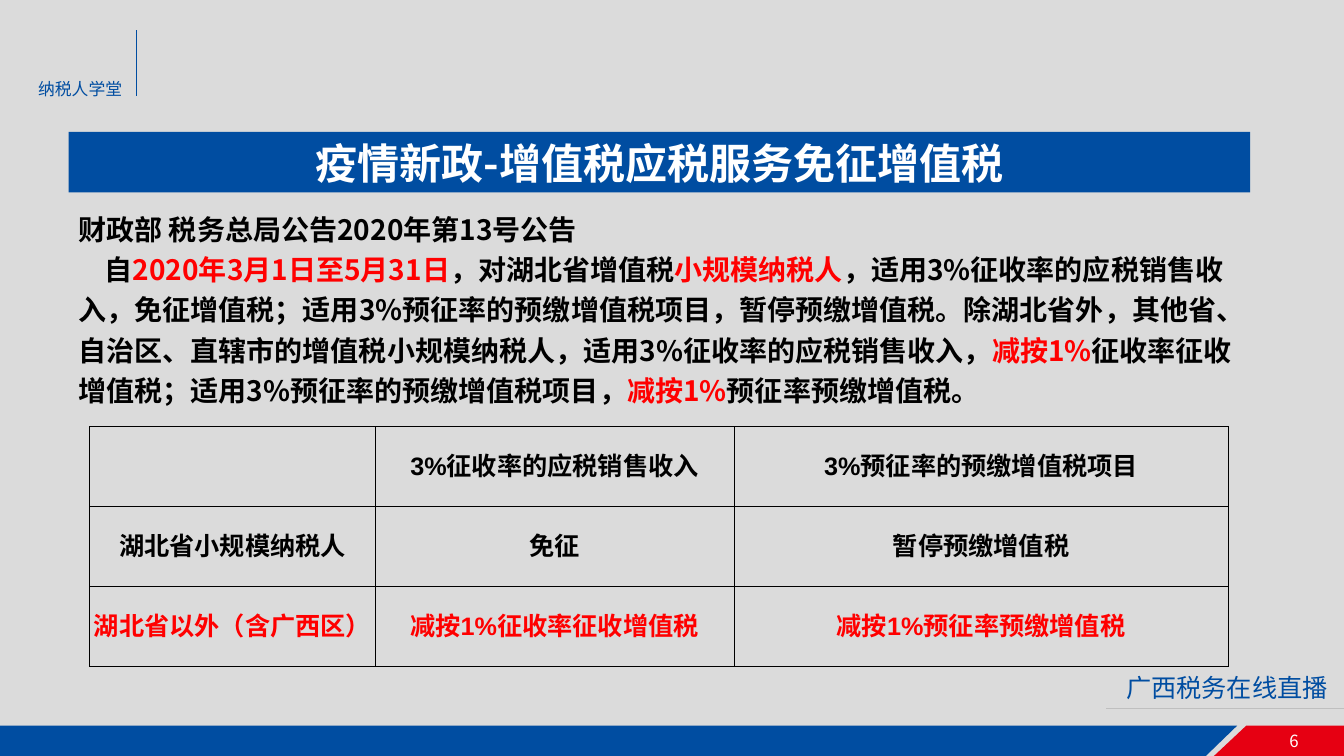
from lxml.etree import SubElement
from pptx import Presentation
from pptx.dml.color import RGBColor
from pptx.enum.shapes import MSO_CONNECTOR, MSO_SHAPE
from pptx.enum.text import MSO_ANCHOR, PP_ALIGN
from pptx.oxml.ns import qn
from pptx.util import Inches, Pt

BLUE = RGBColor(0x00, 0x4D, 0xA1)
RED = RGBColor(0xE6, 0x00, 0x12)
ACCENT = RGBColor(0xFF, 0x00, 0x00)
BLACK = RGBColor(0x00, 0x00, 0x00)
WHITE = RGBColor(0xFF, 0xFF, 0xFF)
GREY = RGBColor(0xBF, 0xBF, 0xBF)
BACKGROUND = RGBColor(0xDB, 0xDB, 0xDB)
CJK = "Noto Sans CJK SC"


def style(span, size, color, bold=False, latin=CJK):
    """Format a run, with the CJK font for its Chinese characters."""
    span.font.size = Pt(size)
    span.font.bold = bold
    span.font.color.rgb = color
    span.font.name = latin
    SubElement(span.font._element, qn("a:ea")).set("typeface", CJK)


deck = Presentation()
deck.slide_width, deck.slide_height = Inches(13.33), Inches(7.5)
page = deck.slides.add_slide(deck.slide_layouts[6])
page.background.fill.solid()
page.background.fill.fore_color.rgb = BACKGROUND
shapes = page.shapes

# Footer bands with slanted ends
footer_bands = [
    (BLUE, [(0, 7.2), (12.27, 7.2), (11.96, 7.5), (0, 7.5)]),
    (RED, [(12.36, 7.2), (13.33, 7.2), (13.33, 7.5), (12.04, 7.5)]),
]
for color, corners in footer_bands:
    points = [(Inches(x), Inches(y)) for x, y in corners]
    builder = shapes.build_freeform(*points[0])
    builder.add_line_segments(points[1:], close=True)
    band = builder.convert_to_shape()
    band.shadow.inherit = False
    band.fill.solid()
    band.fill.fore_color.rgb = color
    band.line.fill.background()

# Thin rules beside the labels
rules = [(1.35, 0.3, 1.35, 0.95, BLUE), (10.97, 7.03, 13.33, 7.03, GREY)]
for x1, y1, x2, y2, color in rules:
    rule = shapes.add_connector(
        MSO_CONNECTOR.STRAIGHT, Inches(x1), Inches(y1), Inches(x2), Inches(y2))
    rule.line.color.rgb = color
    rule.line.width = Pt(0.5)
    SubElement(rule._element.spPr, qn("a:effectLst"))

# Labels and page number
labels = [
    ("6", 12.69, 7.2, 0.54, 0.3, 12, WHITE),
    ("纳税人学堂", 0.28, 0.73, 1.08, 0.3, 12, BLUE),
    ("广西税务在线直播", 11.07, 6.62, 2.26, 0.4, 18, BLUE),
]
for text, left, top, width, height, size, color in labels:
    box = shapes.add_textbox(Inches(left), Inches(top), Inches(width), Inches(height))
    box.text_frame.text = text
    style(box.text_frame.paragraphs[0].runs[0], size, color)

# Title bar
title = shapes.add_shape(
    MSO_SHAPE.RECTANGLE, Inches(0.68), Inches(1.31), Inches(11.72), Inches(0.6))
title.shadow.inherit = False
title.fill.solid()
title.fill.fore_color.rgb = BLUE
title.line.fill.background()
title.text_frame.text = "疫情新政-增值税应税服务免征增值税"
title.text_frame.paragraphs[0].alignment = PP_ALIGN.CENTER
style(title.text_frame.paragraphs[0].runs[0], 30, WHITE, bold=True)

# Announcement text
announcement = [
    [("财政部 税务总局公告2020年第13号公告", BLACK)],
    [
        ("自", BLACK),
        ("2020年3月1日至5月31日", ACCENT),
        ("，对湖北省增值税", BLACK),
        ("小规模纳税人", ACCENT),
        ("，适用3%征收率的应税销售收入，免征增值税；适用3%预征率的预缴增值税项目，"
         "暂停预缴增值税。除湖北省外，其他省、自治区、直辖市的增值税小规模纳税人，"
         "适用3%征收率的应税销售收入，", BLACK),
        ("减按1%", ACCENT),
        ("征收率征收增值税；适用3%预征率的预缴增值税项目，", BLACK),
        ("减按1%", ACCENT),
        ("预征率预缴增值税。", BLACK),
    ],
]
body = shapes.add_textbox(Inches(0.68), Inches(1.99), Inches(11.72), Inches(2.15))
frame = body.text_frame
frame.word_wrap = True
for index, pieces in enumerate(announcement):
    para = frame.add_paragraph() if index else frame.paragraphs[0]
    para.line_spacing = 1.2
    for text, color in pieces:
        span = para.add_run()
        span.text = text
        style(span, 20, color, bold=True)
frame.paragraphs[1]._p.get_or_add_pPr().set("indent", str(Inches(0.26)))

# Comparison table
rows = [
    ["", "3%征收率的应税销售收入", "3%预征率的预缴增值税项目"],
    ["湖北省小规模纳税人", "免征", "暂停预缴增值税"],
    ["湖北省以外（含广西区）", "减按1%征收率征收增值税", "减按1%预征率预缴增值税"],
]
column_widths = [2.83, 3.56, 4.9]
table = shapes.add_table(
    len(rows), len(column_widths), Inches(0.89), Inches(4.23),
    Inches(sum(column_widths)), Inches(2.38)).table
table.first_row = table.horz_banding = False
for column, width in zip(table.columns, column_widths):
    column.width = Inches(width)
for r, texts in enumerate(rows):
    table.rows[r].height = Inches(0.795)
    for c, text in enumerate(texts):
        cell = table.cell(r, c)
        cell.vertical_anchor = MSO_ANCHOR.MIDDLE
        cell.margin_left = cell.margin_right = cell.margin_top = Inches(0.01)
        cell.margin_bottom = Inches(0.05)
        for side in ("a:lnL", "a:lnR", "a:lnT", "a:lnB"):
            border = SubElement(cell._tc.get_or_add_tcPr(), qn(side), w=str(Pt(0.5)))
            fill = SubElement(border, qn("a:solidFill"))
            SubElement(fill, qn("a:srgbClr"), val=str(BLACK))
        cell.fill.background()
        cell.text_frame.text = text
        para = cell.text_frame.paragraphs[0]
        para.alignment = PP_ALIGN.CENTER
        for span in para.runs:
            style(span, 18, ACCENT if r == 2 else BLACK, bold=True, latin="Arial")

deck.save("out.pptx")
